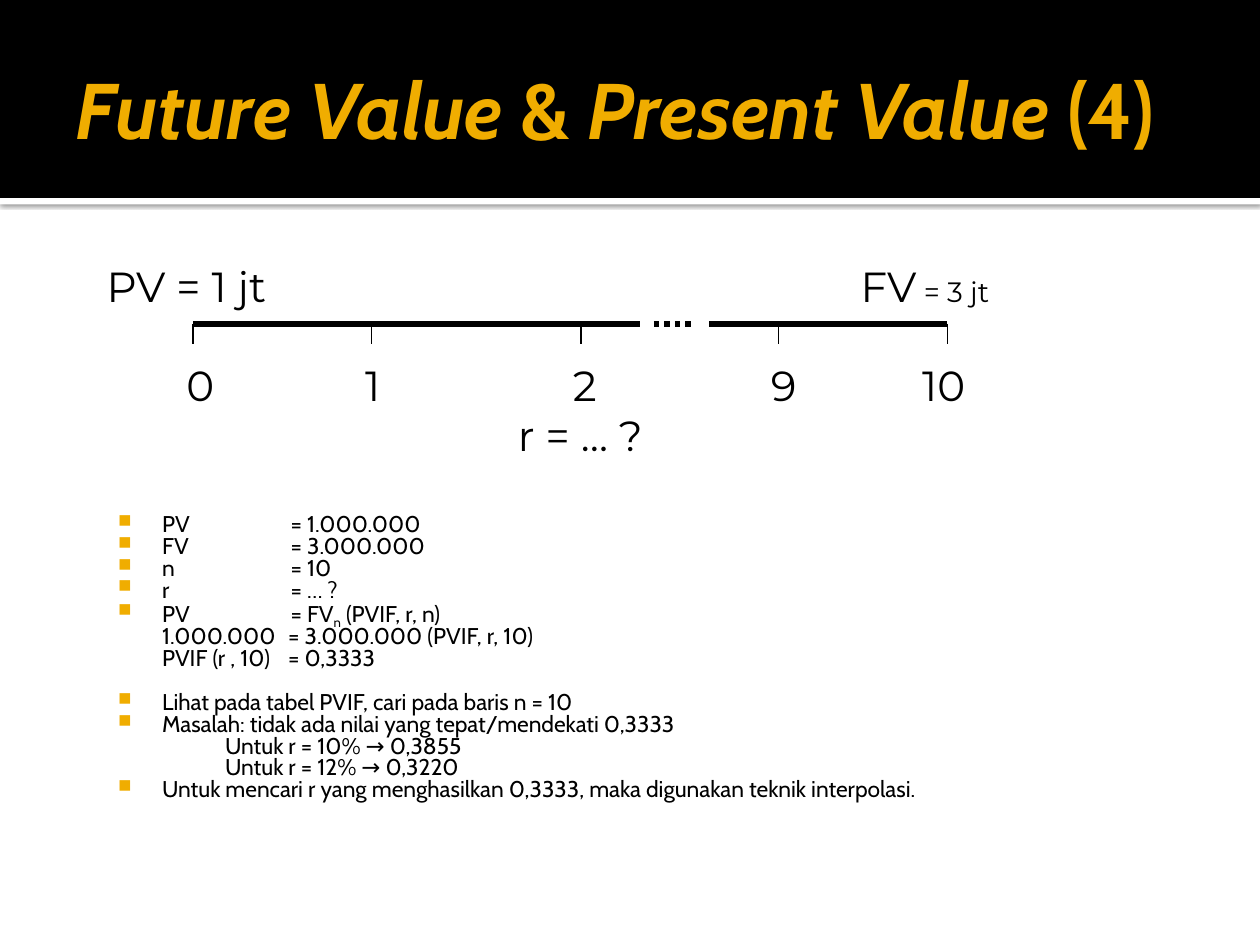
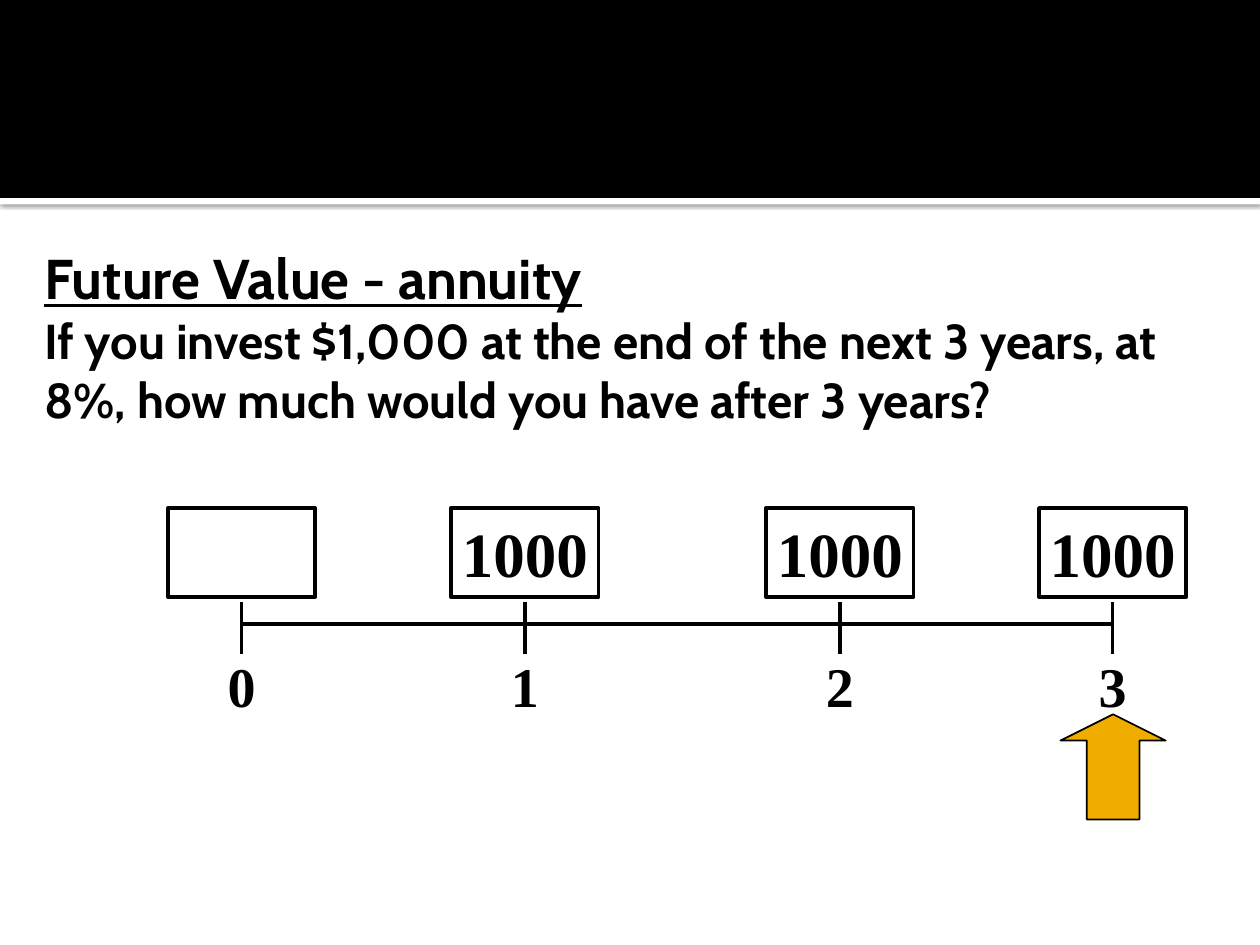
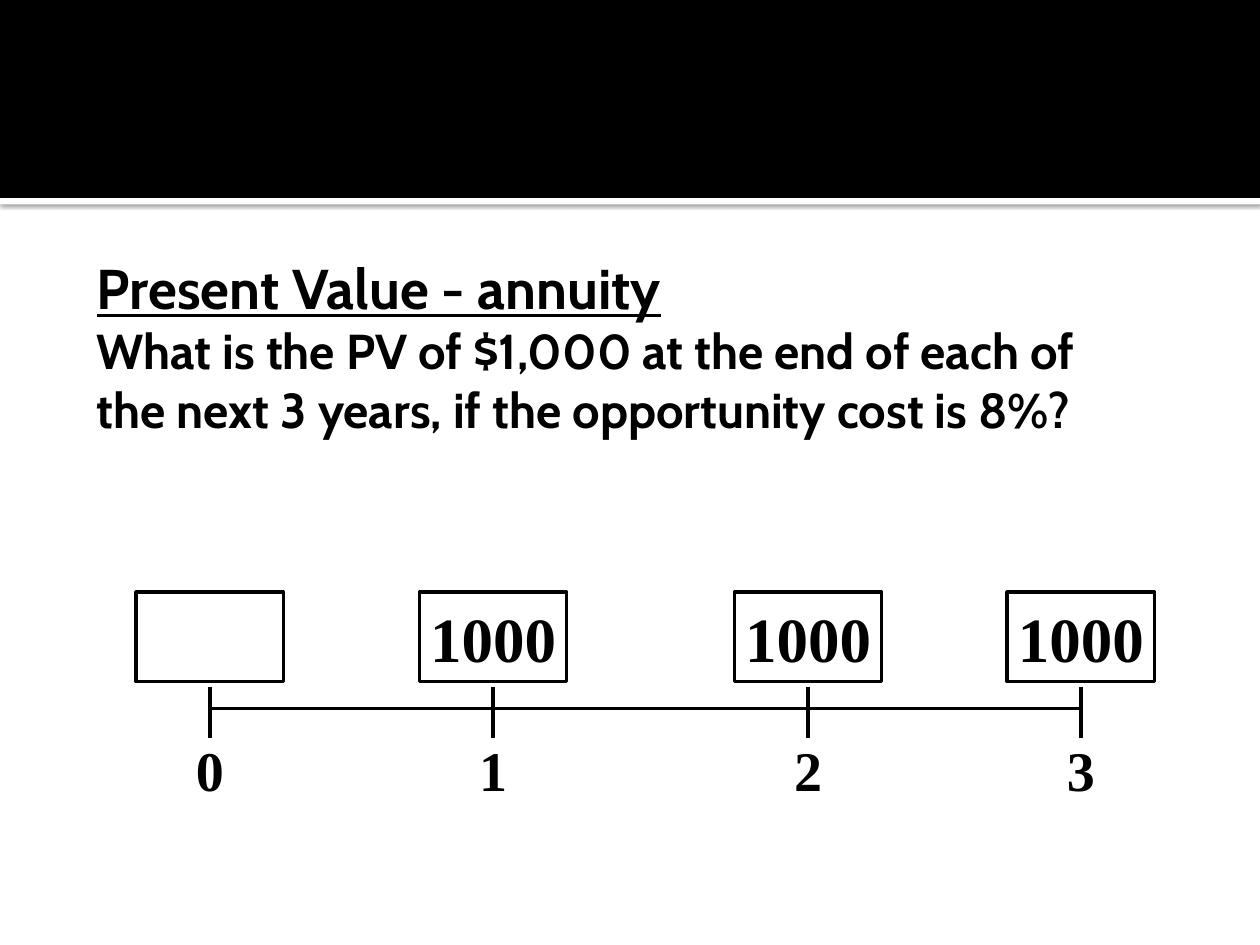
from lxml import etree
from pptx import Presentation
from pptx.dml.color import RGBColor
from pptx.enum import dml, shapes, text
from pptx.oxml import ns
from pptx.util import Cm, Pt

BLACK = RGBColor(0x00, 0x00, 0x00)
WHITE = RGBColor(0xFF, 0xFF, 0xFF)
GOLD = RGBColor(0xF0, 0xAD, 0x00)
HEADING_FONT = "Cabin"
SCALE_FONT = "Montserrat"
FIGURE_FONT = "Times New Roman"


def add_run(paragraph, words, font, size, color=BLACK, **style):
    run = paragraph.add_run()
    run.text = words
    run.font.name = font
    run.font.size = Pt(size)
    run.font.color.rgb = color
    for key, value in style.items():
        setattr(run.font, key, value)
    return run


def add_line(slide, x1, y1, x2, y2, width):
    line = slide.shapes.add_connector(
        shapes.MSO_CONNECTOR.STRAIGHT, Cm(x1), Cm(y1), Cm(x2), Cm(y2))
    line.line.color.rgb = BLACK
    line.line.width = Pt(width)
    etree.SubElement(line._element.spPr, ns.qn("a:effectLst"))
    return line


prs = Presentation()
prs.slide_width = Cm(25.4)
prs.slide_height = Cm(19.05)
layout = prs.slide_layouts[5]

# (left, top, width, height, right inset)
title_places = [
    (1.27, 0.43, 22.86, 3.48, 0.13),
    (0.64, 4.45, 24.13, 4.65, 0.25),
    (1.7, 4.65, 21.39, 4.65, 0.25),
]
slides = []
for left, top, width, height, right_inset in title_places:
    slide = prs.slides.add_slide(layout)
    title = slide.shapes.title
    title.left, title.top, title.width, title.height = map(Cm, (left, top, width, height))
    frame = title.text_frame
    frame.word_wrap = True
    frame.auto_size = text.MSO_AUTO_SIZE.NONE
    frame.vertical_anchor = text.MSO_ANCHOR.MIDDLE
    frame.margin_left, frame.margin_right = Cm(0.25), Cm(right_inset)
    frame.paragraphs[0].alignment = text.PP_ALIGN.LEFT
    slides.append(slide)
rate_slide, future_slide, present_slide = slides

for order, (top, height, color) in enumerate([(3.99, 0.13, WHITE), (0, 3.99, BLACK)]):
    band = rate_slide.shapes.add_shape(
        shapes.MSO_SHAPE.RECTANGLE, 0, Cm(top), prs.slide_width, Cm(height))
    band.fill.solid()
    band.fill.fore_color.rgb = color
    band.line.fill.background()
    band.shadow.inherit = False
    if color == WHITE:
        effects = band._element.spPr.find(ns.qn("a:effectLst"))
        shadow = etree.SubElement(effects, ns.qn("a:outerShdw"), blurRad=str(Pt(2.5)),
                                  dist=str(Pt(0.8)), dir="5400000", rotWithShape="0")
        shade = etree.SubElement(shadow, ns.qn("a:srgbClr"), val=str(BLACK))
        etree.SubElement(shade, ns.qn("a:alpha"), val="60000")
    layout.shapes._spTree.insert(2 + order, band._element)

heading = rate_slide.shapes.title.text_frame.paragraphs[0]
for words, slanted in [("Future Value", True), (" & ", False),
                       ("Present Value", True), (" (4)", False)]:
    add_run(heading, words, HEADING_FONT, 45, GOLD, bold=True, italic=slanted)

solution = [
    (True, ["PV \t\t= 1.000.000"]),
    (True, ["FV \t\t= 3.000.000"]),
    (True, ["n \t\t= 10"]),
    (True, ["r \t\t= … ?"]),
    (True, ["PV \t\t= FV", "n", " (PVIF, r, n)"]),
    (False, ["\t1.000.000 \t= 3.000.000 (PVIF, r, 10)"]),
    (False, ["\tPVIF (r , 10) \t= 0,3333"]),
    (True, ["Lihat pada tabel PVIF, cari pada baris n = 10"]),
    (True, ["Masalah: tidak ada nilai yang tepat/mendekati 0,3333"]),
    (False, ["\t\tUntuk r = 10% → 0,3855"]),
    (False, ["\t\tUntuk r = 12% → 0,3220"]),
    (True, ["Untuk mencari r yang menghasilkan 0,3333, maka digunakan teknik interpolasi."]),
]
steps = rate_slide.shapes.add_textbox(Cm(1.9), Cm(10.13), Cm(21.6), Cm(8.4)).text_frame
steps.word_wrap = True
steps.margin_left, steps.margin_top = Cm(0.15), Cm(0.25)
for number, (bulleted, pieces) in enumerate(solution):
    step = steps.add_paragraph() if number else steps.paragraphs[0]
    step.line_spacing = 0.8
    step.space_before = Pt(12.5 if pieces[0].startswith("Lihat") else 0)
    props = step._p.get_or_add_pPr()
    props.set("marL", str(Cm(1.22)))
    props.set("indent", str(Cm(-0.89)))
    if bulleted:
        bullet_color = etree.SubElement(props, ns.qn("a:buClr"))
        etree.SubElement(bullet_color, ns.qn("a:srgbClr"), val=str(GOLD))
        etree.SubElement(props, ns.qn("a:buSzPct"), val="80000")
        etree.SubElement(props, ns.qn("a:buChar"), char="■")
    else:
        etree.SubElement(props, ns.qn("a:buNone"))
    for piece in pieces:
        run = add_run(step, piece, HEADING_FONT, 13)
        if piece == "n":
            run._r.get_or_add_rPr().set("baseline", "-25000")

AXIS_Y = 6.53
for start, end in [(3.89, 12.9), (14.3, 19.1)]:
    add_line(rate_slide, start, AXIS_Y, end, AXIS_Y, 3)
skipped_years = add_line(rate_slide, 13.18, AXIS_Y, 13.97, AXIS_Y, 3)
skipped_years.line.dash_style = dml.MSO_LINE.ROUND_DOT
for x in (3.89, 7.49, 11.71, 15.7, 19.1):
    add_line(rate_slide, x, AXIS_Y, x, 6.93, 0.75)

scale_labels = [
    (3.51, 7.13, 0.82, [("0", 24)]),
    (7.11, 7.13, 0.82, [("1", 24)]),
    (11.3, 7.12, 0.82, [("2", 24)]),
    (15.29, 7.12, 0.82, [("9", 24)]),
    (18.34, 7.12, 1.6, [("10", 24)]),
    (1.9, 5.13, 4.2, [("PV = 1 jt", 24)]),
    (17.1, 5.13, 3.6, [("FV", 24), (" = 3 jt", 16)]),
    (10.19, 8.13, 3.2, [("r = … ?", 24)]),
]
for left, top, width, pieces in scale_labels:
    frame = rate_slide.shapes.add_textbox(Cm(left), Cm(top), Cm(width), Cm(1.02)).text_frame
    frame.word_wrap = True
    for words, size in pieces:
        add_run(frame.paragraphs[0], words, SCALE_FONT, size)

annuities = [
    (future_slide, 0, 0, "Future Value - annuity",
     "If you invest $1,000 at the end of the next 3 years, at 8%, "
     "how much would you have after 3 years?"),
    (present_slide, -0.64, 1.7, "Present Value - annuity",
     "What is the PV of $1,000 at the end of each of the next 3 years, "
     "if the opportunity cost is 8%?"),
]
YEAR_X = [4.87, 10.58, 16.93, 22.43]
BOX_WIDTH = 2.97
for slide, dx, dy, topic, question in annuities:
    heading = slide.shapes.title.text_frame.paragraphs[0]
    add_run(heading, topic, HEADING_FONT, 32, bold=True, underline=True)
    heading.add_line_break()
    add_run(heading, question, HEADING_FONT, 28, bold=True, underline=False)

    add_line(slide, YEAR_X[0] + dx, 12.58 + dy, YEAR_X[-1] + dx, 12.58 + dy, 2)
    for year, year_x in enumerate(YEAR_X):
        x = year_x + dx
        add_line(slide, x, 12.14 + dy, x, 13.18 + dy, 2)

        payment = slide.shapes.add_shape(
            shapes.MSO_SHAPE.RECTANGLE, Cm(x - BOX_WIDTH / 2), Cm(10.24 + dy),
            Cm(BOX_WIDTH), Cm(1.8))
        payment.shadow.inherit = False
        payment.line.color.rgb = BLACK
        payment.line.width = Pt(2)
        if year:
            payment.fill.solid()
            payment.fill.fore_color.rgb = WHITE
            frame = payment.text_frame
            frame.margin_left = frame.margin_right = 0
            frame.margin_top = frame.margin_bottom = 0
            frame.vertical_anchor = text.MSO_ANCHOR.MIDDLE
            frame.paragraphs[0].alignment = text.PP_ALIGN.CENTER
            add_run(frame.paragraphs[0], "1000", FIGURE_FONT, 36, bold=True)
        else:
            payment.fill.background()

        frame = slide.shapes.add_textbox(
            Cm(x - 1), Cm(13 + dy), Cm(2), Cm(1.6)).text_frame
        frame.word_wrap = True
        frame.paragraphs[0].alignment = text.PP_ALIGN.CENTER
        add_run(frame.paragraphs[0], str(year), FIGURE_FONT, 32, bold=True)

value_date = future_slide.shapes.add_shape(
    shapes.MSO_SHAPE.UP_ARROW, Cm(21.38), Cm(14.4), Cm(2.12), Cm(2.12))
value_date.adjustments[0] = 0.5
value_date.adjustments[1] = 0.25
value_date.shadow.inherit = False
value_date.fill.solid()
value_date.fill.fore_color.rgb = GOLD
value_date.line.color.rgb = BLACK
value_date.line.width = Pt(1)

prs.save("out.pptx")
